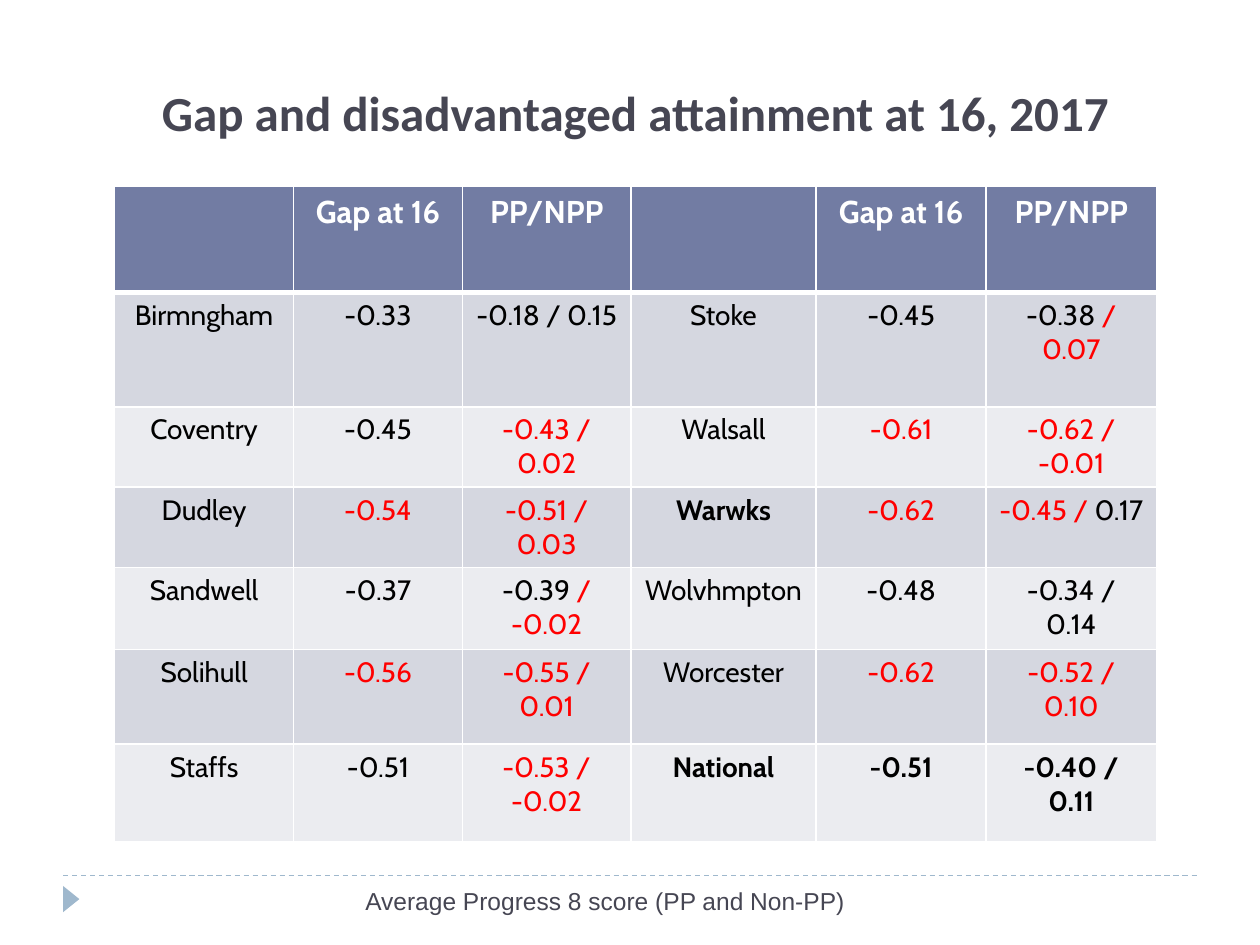
from lxml import etree
from pptx import Presentation
from pptx.dml.color import RGBColor
from pptx.enum.dml import MSO_LINE
from pptx.enum.shapes import MSO_CONNECTOR, MSO_SHAPE
from pptx.enum.text import MSO_ANCHOR, PP_ALIGN
from pptx.oxml.ns import qn
from pptx.util import Cm, Pt

CENTER, BOTTOM = PP_ALIGN.CENTER, MSO_ANCHOR.BOTTOM
DASH, STRAIGHT = MSO_LINE.DASH, MSO_CONNECTOR.STRAIGHT
TRIANGLE = MSO_SHAPE.ISOSCELES_TRIANGLE

INK = RGBColor(0x46, 0x46, 0x53)
ACCENT = RGBColor(0x9F, 0xB8, 0xCD)
HEADER = RGBColor(0x72, 0x7C, 0xA3)
BANDS = [RGBColor(0xD5, 0xD7, 0xE0), RGBColor(0xEB, 0xEC, 0xF0)]
WHITE = RGBColor(0xFF, 0xFF, 0xFF)
BLACK = RGBColor(0, 0, 0)
RED = RGBColor(0xFF, 0, 0)

# Area, gap at 16, pupil premium score, non-pupil premium score
NATIONAL = ("National", "-0.51", "-0.40", "0.11")
LEFT_AREAS = [
    ("Birmngham", "-0.33", "-0.18", "0.15"),
    ("Coventry", "-0.45", "-0.43", "0.02"),
    ("Dudley", "-0.54", "-0.51", "0.03"),
    ("Sandwell", "-0.37", "-0.39", "-0.02"),
    ("Solihull", "-0.56", "-0.55", "0.01"),
    ("Staffs", "-0.51", "-0.53", "-0.02"),
]
RIGHT_AREAS = [
    ("Stoke", "-0.45", "-0.38", "0.07"),
    ("Walsall", "-0.61", "-0.62", "-0.01"),
    ("Warwks", "-0.62", "-0.45", "0.17"),
    ("Wolvhmpton", "-0.48", "-0.34", "0.14"),
    ("Worcester", "-0.62", "-0.52", "0.10"),
    NATIONAL,
]
BOLD_NAMES = {"Warwks", "National"}
COL_WIDTHS = [3.61, 3.4, 3.4, 3.73, 3.43, 3.43]
ROW_HEIGHTS = [2.13, 2.31, 1.62, 1.62, 1.65, 1.91, 1.96]


def add_run(p, text, font, size, color, bold=False):
    r = p.add_run()
    r.text = text
    r.font.name, r.font.size, r.font.bold = font, Pt(size), bold
    r.font.color.rgb = color


def score_color(value, benchmark):
    """Red marks a score below the national one."""
    return RED if float(value) < float(benchmark) else BLACK


def area_cells(area):
    """Return the runs (text, colour, bold) of an area's three cells."""
    name, gap, pp, npp = area
    bold = area is NATIONAL
    pp_color = score_color(pp, NATIONAL[2])
    npp_color = score_color(npp, NATIONAL[3])
    if pp_color == npp_color:
        pair = [(f"{pp} / {npp}", pp_color, bold)]
    elif pp_color == RED:
        pair = [(f"{pp} / ", RED, bold), (npp, npp_color, bold)]
    else:
        pair = [(f"{pp} ", pp_color, bold), (f"/ {npp}", RED, bold)]
    return [[(name, BLACK, name in BOLD_NAMES)],
            [(gap, score_color(gap, NATIONAL[1]), bold)],
            pair]


def set_borders(cell, bottom):
    tc_pr = cell._tc.get_or_add_tcPr()
    widths = {"a:lnL": 1, "a:lnR": 1, "a:lnT": 1, "a:lnB": bottom}
    for i, (tag, width) in enumerate(widths.items()):
        ln = etree.Element(qn(tag), w=str(Pt(width)))
        fill = etree.SubElement(ln, qn("a:solidFill"))
        etree.SubElement(fill, qn("a:srgbClr"), val=str(WHITE))
        tc_pr.insert(i, ln)


def fill_cell(cell, runs, size, fill, bottom):
    cell.fill.solid()
    cell.fill.fore_color.rgb = fill
    set_borders(cell, bottom)
    p = cell.text_frame.paragraphs[0]
    p.alignment = CENTER
    for text, color, bold in runs:
        add_run(p, text, "Cabin", size, color, bold)


def add_title(s, x, y, w, h):
    sp = s.shapes.title
    sp.left, sp.top, sp.width, sp.height = Cm(x), Cm(y), Cm(w), Cm(h)
    tf = sp.text_frame
    tf.word_wrap, tf.vertical_anchor = True, BOTTOM
    p = tf.paragraphs[0]
    p.alignment = CENTER
    add_run(p, "Gap and disadvantaged attainment at 16, 2017",
            "Calibri", 28, INK, True)


def add_scores(s, x, y):
    table = s.shapes.add_table(
        len(ROW_HEIGHTS), len(COL_WIDTHS), Cm(x), Cm(y),
        Cm(sum(COL_WIDTHS)), Cm(sum(ROW_HEIGHTS))).table
    for col, width in zip(table.columns, COL_WIDTHS):
        col.width = Cm(width)
    for row, height in zip(table.rows, ROW_HEIGHTS):
        row.height = Cm(height)

    # Header row
    labels = [[], [("Gap at 16", WHITE, True)], [("PP/NPP", WHITE, True)]]
    for c, runs in enumerate(labels * 2):
        fill_cell(table.cell(0, c), runs, 18, HEADER, 3)

    # Two areas side by side in each body row
    for i, (left, right) in enumerate(zip(LEFT_AREAS, RIGHT_AREAS)):
        for c, runs in enumerate(area_cells(left) + area_cells(right)):
            fill_cell(table.cell(i + 1, c), runs, 16, BANDS[i % 2], 1)


def add_footer(s, x, y, w):
    # Dashed rule
    rule = s.shapes.add_connector(STRAIGHT, Cm(x), Cm(y), Cm(x + w), Cm(y))
    rule.line.color.rgb, rule.line.width = ACCENT, Pt(0.75)
    rule.line.dash_style = DASH
    etree.SubElement(rule._element.spPr, qn("a:effectLst"))

    # Marker pointing right
    marker = s.shapes.add_shape(TRIANGLE, Cm(x - 0.1), Cm(y + 0.31),
                                Cm(0.53), Cm(0.33))
    marker.rotation = 90
    marker.shadow.inherit = False
    marker.fill.solid()
    marker.fill.fore_color.rgb = ACCENT
    marker.line.fill.background()

    # Caption
    tf = s.shapes.add_textbox(Cm(x + 0.63), Cm(y + 0.08),
                              Cm(w - 2.26), Cm(1.02)).text_frame
    tf.word_wrap = True
    p = tf.paragraphs[0]
    p.alignment = CENTER
    add_run(p, "Average Progress 8 score (PP and Non-PP)", "Arial", 14, INK)


def main():
    prs = Presentation()
    prs.slide_width, prs.slide_height = Cm(25.4), Cm(19.05)
    s = prs.slides.add_slide(prs.slide_layouts[5])
    add_footer(s, 1.27, 17.65, 22.86)
    add_title(s, 2.9, 0.91, 19.81, 2.06)
    add_scores(s, 2.31, 3.76)
    prs.save("out.pptx")


if __name__ == "__main__":
    main()
